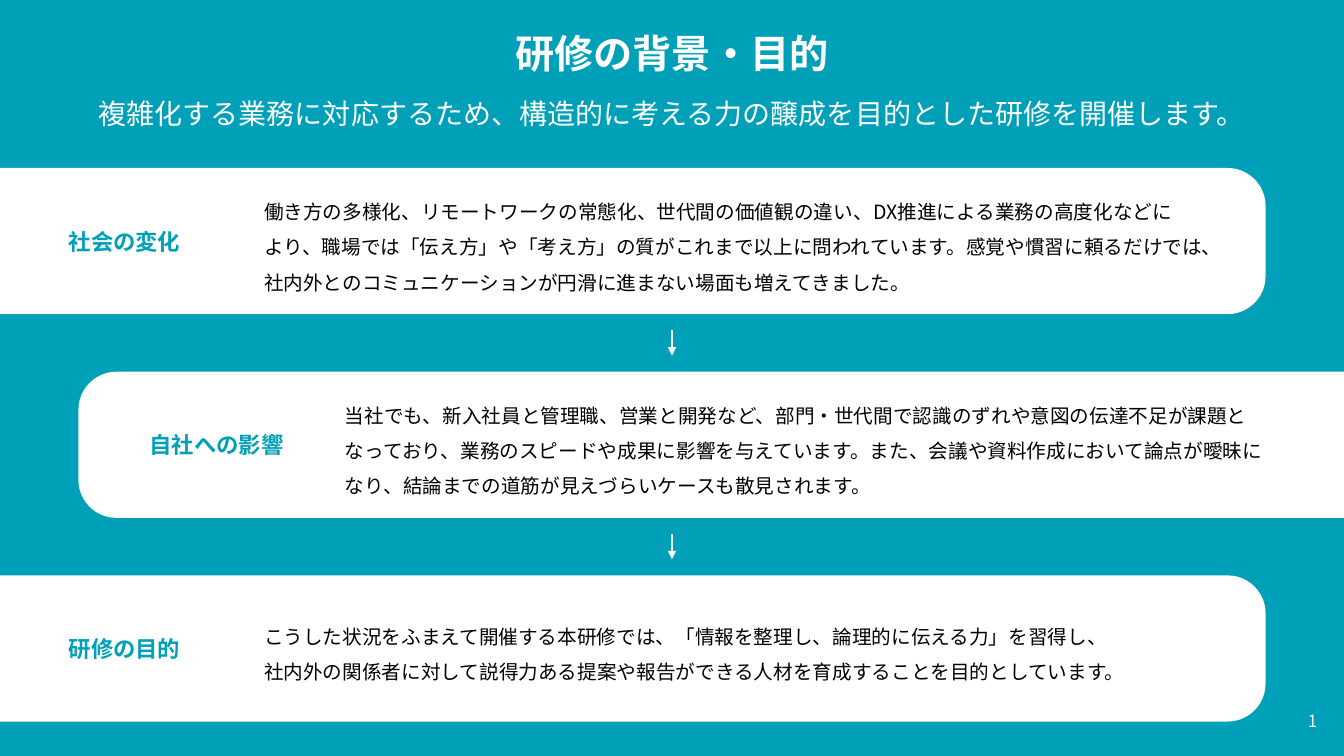
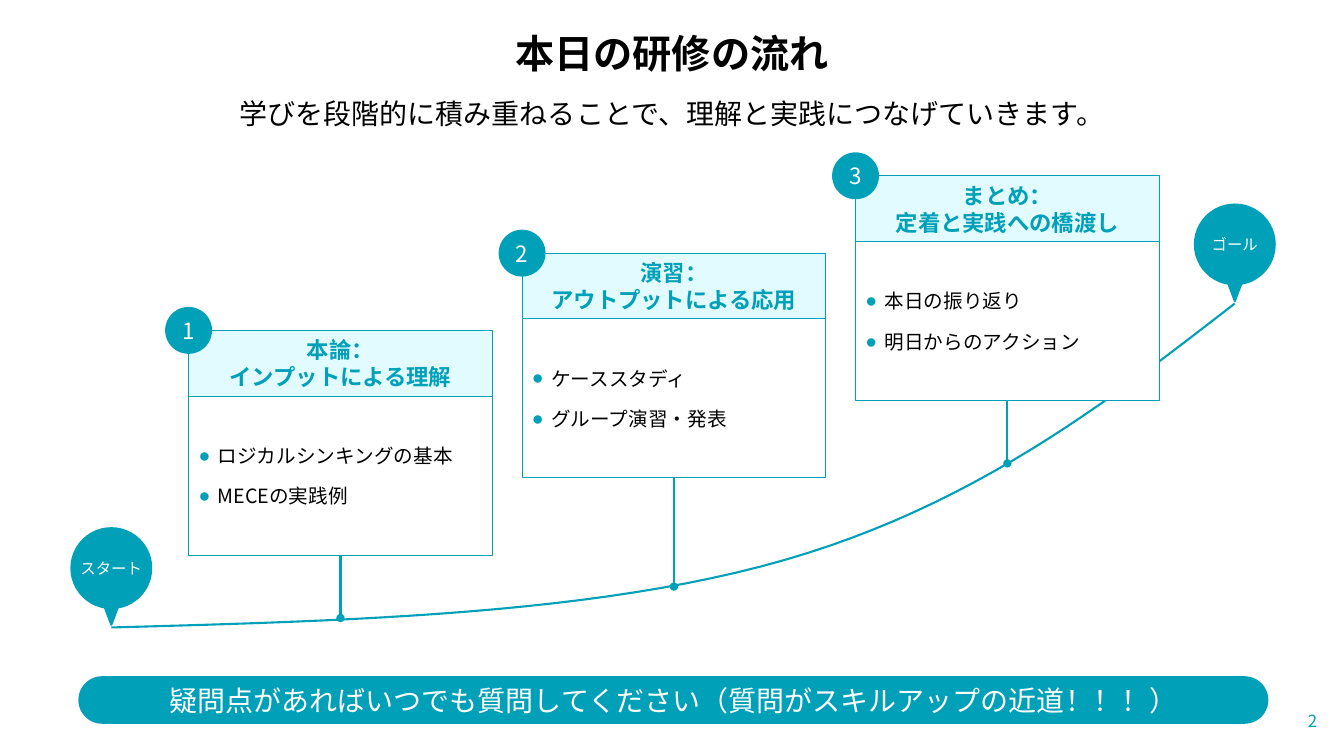
from lxml.etree import SubElement as Sub
from pptx import Presentation
from pptx.dml.color import RGBColor
from pptx.enum.shapes import MSO_CONNECTOR as Link, MSO_SHAPE as Form
from pptx.enum.text import MSO_ANCHOR as Anchor, MSO_AUTO_SIZE as Fit, PP_ALIGN as Align
from pptx.oxml.ns import qn
from pptx.util import Pt

FONT = "Noto Sans CJK JP"
TEAL, PALE, WHITE, BLACK = "00A0B8", "E1FBFF", "FFFFFF", "000000"
WIDE, HIGH = 960, 540


def paint(color, tone):
    """Set a colour object from a hex string."""
    color.rgb = RGBColor.from_string(tone)


def place(x, y, w, h):
    """Turn a box in points into lengths."""
    return Pt(x), Pt(y), Pt(w), Pt(h)


def bend(a, b, c, d, steps=24):
    """Return points along a cubic curve, without its start."""
    spots = []
    for i in range(1, steps + 1):
        t = i / steps
        u = 1 - t
        parts = (u ** 3, 3 * u * u * t, 3 * u * t * t, t ** 3)
        spots.append(tuple(sum(k * p[n] for k, p in zip(parts, (a, b, c, d)))
                           for n in (0, 1)))
    return spots


class Deck:
    """Hold the shared style and the current slide."""

    def __init__(self):
        """Start an empty wide deck."""
        self.file = Presentation()
        self.file.slide_width, self.file.slide_height = Pt(WIDE), Pt(HIGH)
        self.slide = None

    def page(self, title, lead, back, ink, mark):
        """Add a slide with its title, lead line and number."""
        self.slide = self.file.slides.add_slide(self.file.slide_layouts[2])
        fill = self.slide.background.fill
        fill.solid()
        paint(fill.fore_color, back)
        heads = ((title, 21, 28, True), (lead, 64, 20, False))
        for hold, (text, y, size, bold) in zip(self.slide.placeholders, heads):
            hold.left, hold.top, hold.width, hold.height = place(46, y, 868, 34)
            self.put(hold, [text], size, ink, bold, Align.CENTER, 6)
        self.text((913, 500.5, 35, 29), [str(len(self.file.slides))], 12, mark,
                  align=Align.RIGHT)

    def put(self, shape, lines, size, ink, bold=False, align=Align.LEFT,
            before=0, space=1.0, wrap=True, dots=False):
        """Fill a shape with paragraphs."""
        frame = shape.text_frame
        frame.auto_size = Fit.NONE
        frame.word_wrap = wrap
        frame.vertical_anchor = Anchor.MIDDLE
        for i, line in enumerate(lines):
            para = frame.add_paragraph() if i else frame.paragraphs[0]
            para.alignment, para.line_spacing = align, space
            para.space_before = Pt(before)
            if dots:
                self.dot(para)
            for j, part in enumerate(line.split("\n")):
                if j:
                    para.add_line_break()
                run = para.add_run()
                run.text = part
                run.font.name, run.font.size, run.font.bold = FONT, Pt(size), bold
                paint(run.font.color, ink)
                Sub(run._r.get_or_add_rPr(), qn("a:ea")).set("typeface", FONT)

    def dot(self, para):
        """Give a paragraph a teal bullet and hanging indent."""
        props = para._p.get_or_add_pPr()
        props.set("marL", str(Pt(13.7)))
        props.set("indent", str(-Pt(13.7)))
        Sub(Sub(props, qn("a:buClr")), qn("a:srgbClr")).set("val", TEAL)
        Sub(props, qn("a:buFont")).set("typeface", "Arial")
        Sub(props, qn("a:buChar")).set("char", "●")

    def text(self, box, lines, size, ink, **style):
        """Add a text box."""
        self.put(self.slide.shapes.add_textbox(*place(*box)), lines, size, ink, **style)

    def shape(self, form, box, fill, edge=None, width=1.5):
        """Add a preset shape with fill and optional outline."""
        shape = self.slide.shapes.add_shape(form, *place(*box))
        shape.shadow.inherit = False
        shape.fill.solid()
        paint(shape.fill.fore_color, fill)
        if edge:
            paint(shape.line.color, edge)
            shape.line.width = Pt(width)
        else:
            shape.line.fill.background()
        return shape

    def line(self, start, end, tone, tip, kind, goal=None):
        """Add a line with one tip, joined to the bottom of a goal."""
        line = self.slide.shapes.add_connector(
            Link.STRAIGHT, *(Pt(n) for n in (*start, *end)))
        if goal is not None:
            line.end_connect(goal, 2)
        paint(line.line.color, tone)
        line.line.width = Pt(1.5)
        Sub(line.get_or_add_ln(), qn(tip)).set("type", kind)
        Sub(line._element.spPr, qn("a:effectLst"))

    def curve(self, start, *bends):
        """Add an open curve made of cubic bends."""
        pen = self.slide.shapes.build_freeform(Pt(start[0]), Pt(start[1]))
        for one, two, end in bends:
            spots = bend(start, one, two, end)
            pen.add_line_segments([(Pt(x), Pt(y)) for x, y in spots], close=False)
            start = end
        road = pen.convert_to_shape()
        road.shadow.inherit = False
        road.fill.background()
        paint(road.line.color, TEAL)
        road.line.width = Pt(1.5)

    def band(self, y, right, label, lines):
        """Add a white band that runs off one side, with its texts."""
        w, h, shift = 904, 104.4, 57.8 if right else 0
        mid = WIDE - w / 2 if right else w / 2
        band = self.shape(Form.ROUND_2_SAME_RECTANGLE,
                          (mid - h / 2, y + h / 2 - w / 2, h, w), WHITE)
        band.adjustments[0] = 0.26
        band.rotation = 270 if right else 90
        top = y + (h - 80) / 2
        self.text((42 + shift, top, 117, 80), [label], 16, TEAL, bold=True, before=6)
        self.text((181.5 + shift, top, 688.5, 80), lines, 14, BLACK, space=1.5)

    def disc(self, x, y, size, text, points):
        """Add a teal disc centred on a point."""
        disc = self.shape(Form.OVAL, (x - size / 2, y - size / 2, size, size), TEAL, TEAL)
        self.put(disc, [text], points, WHITE, align=Align.CENTER, before=6, wrap=False)

    def pin(self, x, y, text):
        """Add a map pin centred on a point."""
        self.disc(x, y, 57, text, 11)
        tip = self.shape(Form.ISOSCELES_TRIANGLE, (x - 9, y + 16.4, 18, 24), TEAL, TEAL)
        tip.rotation = 180

    def card(self, x, y, foot, head, items):
        """Add a step card with a stem down to the curve."""
        w, cap, deep = 217, 47, 113.5
        body = self.shape(Form.RECTANGLE, (x, y + cap, w, deep), WHITE, TEAL, 0.75)
        self.put(body, items, 14, BLACK, before=12, dots=True)
        top = self.shape(Form.RECTANGLE, (x, y, w, cap), PALE, TEAL, 0.75)
        self.put(top, [head], 16, TEAL, True, Align.CENTER, 12)
        mid = x + w / 2
        self.line((mid, foot), (mid, y + cap + deep), TEAL, "a:headEnd", "oval", body)

    def pill(self, text):
        """Add the closing message bar."""
        pill = self.shape(Form.ROUNDED_RECTANGLE, (56, 483, 850, 34), TEAL)
        pill.adjustments[0] = 0.5
        self.put(pill, [text], 20, WHITE, align=Align.CENTER, before=6)


BANDS = [
    ("社会の変化", [
        "働き方の多様化、リモートワークの常態化、世代間の価値観の違い、DX推進による業務の高度化などに",
        "より、職場では「伝え方」や「考え方」の質がこれまで以上に問われています。感覚や慣習に頼るだけでは、",
        "社内外とのコミュニケーションが円滑に進まない場面も増えてきました。"]),
    ("自社への影響", [
        "当社でも、新入社員と管理職、営業と開発など、部門・世代間で認識のずれや意図の伝達不足が課題と",
        "なっており、業務のスピードや成果に影響を与えています。また、会議や資料作成において論点が曖昧に",
        "なり、結論までの道筋が見えづらいケースも散見されます。"]),
    ("研修の目的", [
        "こうした状況をふまえて開催する本研修では、「情報を整理し、論理的に伝える力」を習得し、",
        "社内外の関係者に対して説得力ある提案や報告ができる人材を育成することを目的としています。"]),
]

CARDS = [
    (441.4, "本論：\nインプットによる理解", ["ロジカルシンキングの基本", "MECEの実践例"]),
    (419, "演習：\nアウトプットによる応用", ["ケーススタディ", "グループ演習・発表"]),
    (331, "まとめ：\n定着と実践への橋渡し", ["本日の振り返り", "明日からのアクション"]),
]


def main():
    """Build both slides and save."""
    deck = Deck()
    deck.page("研修の背景・目的",
              "複雑化する業務に対応するため、構造的に考える力の醸成を目的とした研修を開催します。",
              TEAL, WHITE, WHITE)
    for i, (label, lines) in enumerate(BANDS):
        y = 120 + 145.5 * i
        deck.band(y, i == 1, label, lines)
        if i:
            deck.line((WIDE / 2, y - 29.5), (WIDE / 2, y - 11.5), WHITE,
                      "a:tailEnd", "triangle")

    deck.page("本日の研修の流れ",
              "学びを段階的に積み重ねることで、理解と実践につなげていきます。",
              WHITE, BLACK, TEAL)
    deck.curve((79.5, 448.2),
               ((253.5, 443.5), (427, 438.5), (560.5, 400)),
               ((694, 361.5), (788.5, 289.5), (882, 216.8)))
    spots = [(134.7 + 238.2 * i, 236 - 55.2 * i) for i in range(len(CARDS))]
    for (x, y), card in zip(spots, CARDS):
        deck.card(x, y, *card)
    deck.pin(79.5, 405.8, "スタート")
    deck.pin(882, 174.6, "ゴール")
    deck.pill("疑問点があればいつでも質問してください（質問がスキルアップの近道！！！）")
    for i, (x, y) in enumerate(spots, 1):
        deck.disc(x, y, 32, str(i), 16)
    deck.file.save("out.pptx")


if __name__ == "__main__":
    main()
